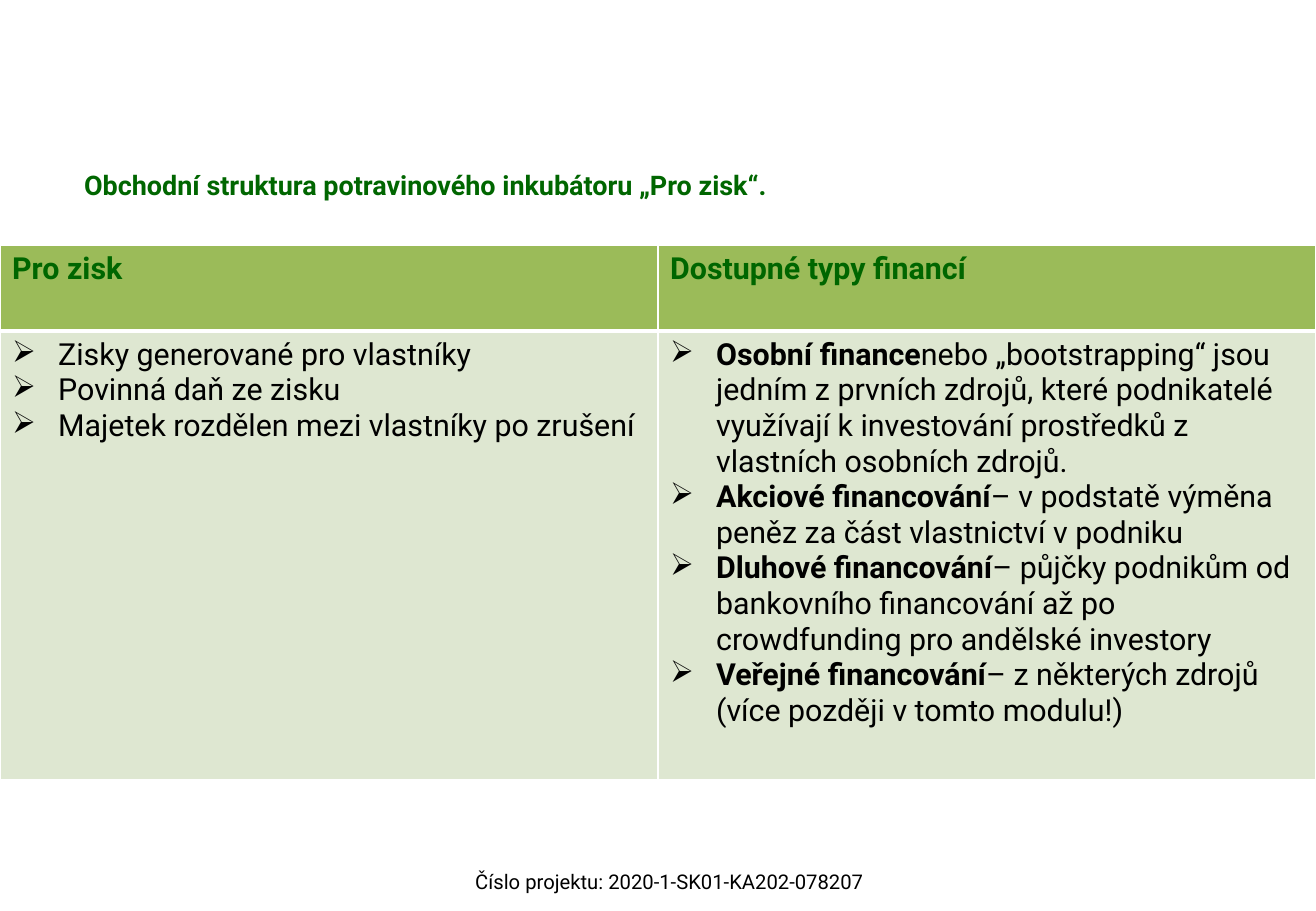
from lxml.etree import SubElement
from pptx import Presentation
from pptx.dml.color import RGBColor
from pptx.enum.text import MSO_ANCHOR, MSO_AUTO_SIZE, PP_ALIGN
from pptx.oxml.ns import qn
from pptx.util import Pt

TITLE = "Obchodní struktura potravinového inkubátoru „Pro zisk“."
FOOTER = "Číslo projektu: 2020-1-SK01-KA202-078207"
# Each column: heading, then bullets as (bold lead, plain text)
COLUMNS = [
    ("Pro zisk", [
        ("", "Zisky generované pro vlastníky"),
        ("", "Povinná daň ze zisku"),
        ("", "Majetek rozdělen mezi vlastníky po zrušení"),
    ]),
    ("Dostupné typy financí", [
        ("Osobní finance", "nebo „bootstrapping“ jsou jedním z prvních zdrojů, které "
         "podnikatelé využívají k investování prostředků z vlastních osobních zdrojů."),
        ("Akciové financování", "– v podstatě výměna peněz za část vlastnictví v podniku"),
        ("Dluhové financování", "– půjčky podnikům od bankovního financování až po "
         "crowdfunding pro andělské investory"),
        ("Veřejné financování", "– z některých zdrojů (více později v tomto modulu!)"),
    ]),
]
COLORS = {"green": "006600", "black": "000000", "header": "9BBB59",
          "body": "DEE7D1", "border": "FFFFFF"}
FONT = "Roboto"
SCALE = 7526  # EMU per px
SLIDE_WIDTH, SLIDE_HEIGHT = 1316, 911
TITLE_BOX = (72, 162, 1033, 45)
FOOTER_BOX = (454, 863, 431, 36)
TABLE_TOP = 245
ROW_HEIGHTS = (86, 449)
BULLET_INDENT = 46


def px(*lengths):
    return [length * SCALE for length in lengths]


def format_font(font, size, color, bold=False):
    font.name, font.size, font.bold = FONT, Pt(size), bold
    font.color.rgb = RGBColor.from_string(COLORS[color])


def style_cell(cell, fill, top, bottom):
    """Fill the cell and draw its borders, with top and bottom widths in points."""
    properties = cell._tc.get_or_add_tcPr()
    for tag, width in (("lnL", 1), ("lnR", 1), ("lnT", top), ("lnB", bottom)):
        line = SubElement(properties, qn(f"a:{tag}"), w=str(Pt(width)))
        solid = SubElement(line, qn("a:solidFill"))
        SubElement(solid, qn("a:srgbClr"), val=COLORS["border"])
    cell.fill.solid()
    cell.fill.fore_color.rgb = RGBColor.from_string(COLORS[fill])


def add_bullet(paragraph, lead, text):
    properties = paragraph._p.get_or_add_pPr()
    indent = BULLET_INDENT * SCALE
    properties.set("marL", str(indent))
    properties.set("indent", str(-indent))
    SubElement(properties, qn("a:buChar"), char="➢")
    for words, bold in ((lead, True), (text, False)):
        if words:
            run = paragraph.add_run()
            run.text = words
            format_font(run.font, 18, "black", bold)


def add_title(slide):
    title = slide.shapes.title
    title.left, title.top, title.width, title.height = px(*TITLE_BOX)
    frame = title.text_frame
    frame.text = TITLE
    frame.word_wrap = True
    frame.auto_size = MSO_AUTO_SIZE.NONE
    frame.vertical_anchor = MSO_ANCHOR.TOP
    frame.paragraphs[0].alignment = PP_ALIGN.LEFT
    format_font(frame.paragraphs[0].runs[0].font, 16, "green", True)


def add_finance_table(slide):
    box = px(0, TABLE_TOP, SLIDE_WIDTH, sum(ROW_HEIGHTS))
    table = slide.shapes.add_table(len(ROW_HEIGHTS), len(COLUMNS), *box).table
    for row, height in zip(table.rows, px(*ROW_HEIGHTS)):
        row.height = height
    for index, (heading, bullets) in enumerate(COLUMNS):
        header, body = table.cell(0, index), table.cell(1, index)
        style_cell(header, "header", 1, 3)
        style_cell(body, "body", 3, 1)
        header.text_frame.text = heading
        format_font(header.text_frame.paragraphs[0].runs[0].font, 18, "green", True)
        frame = body.text_frame
        for number, (lead, text) in enumerate(bullets):
            paragraph = frame.add_paragraph() if number else frame.paragraphs[0]
            add_bullet(paragraph, lead, text)


def add_footer(slide):
    frame = slide.shapes.add_textbox(*px(*FOOTER_BOX)).text_frame
    frame.text = FOOTER
    frame.word_wrap = False
    frame.auto_size = MSO_AUTO_SIZE.SHAPE_TO_FIT_TEXT
    frame.paragraphs[0].alignment = PP_ALIGN.CENTER
    format_font(frame.paragraphs[0].runs[0].font, 12, "black")


def main():
    presentation = Presentation()
    presentation.slide_width, presentation.slide_height = px(SLIDE_WIDTH, SLIDE_HEIGHT)
    slide = presentation.slides.add_slide(presentation.slide_layouts[5])
    add_footer(slide)
    add_title(slide)
    add_finance_table(slide)
    presentation.save("out.pptx")


if __name__ == "__main__":
    main()
